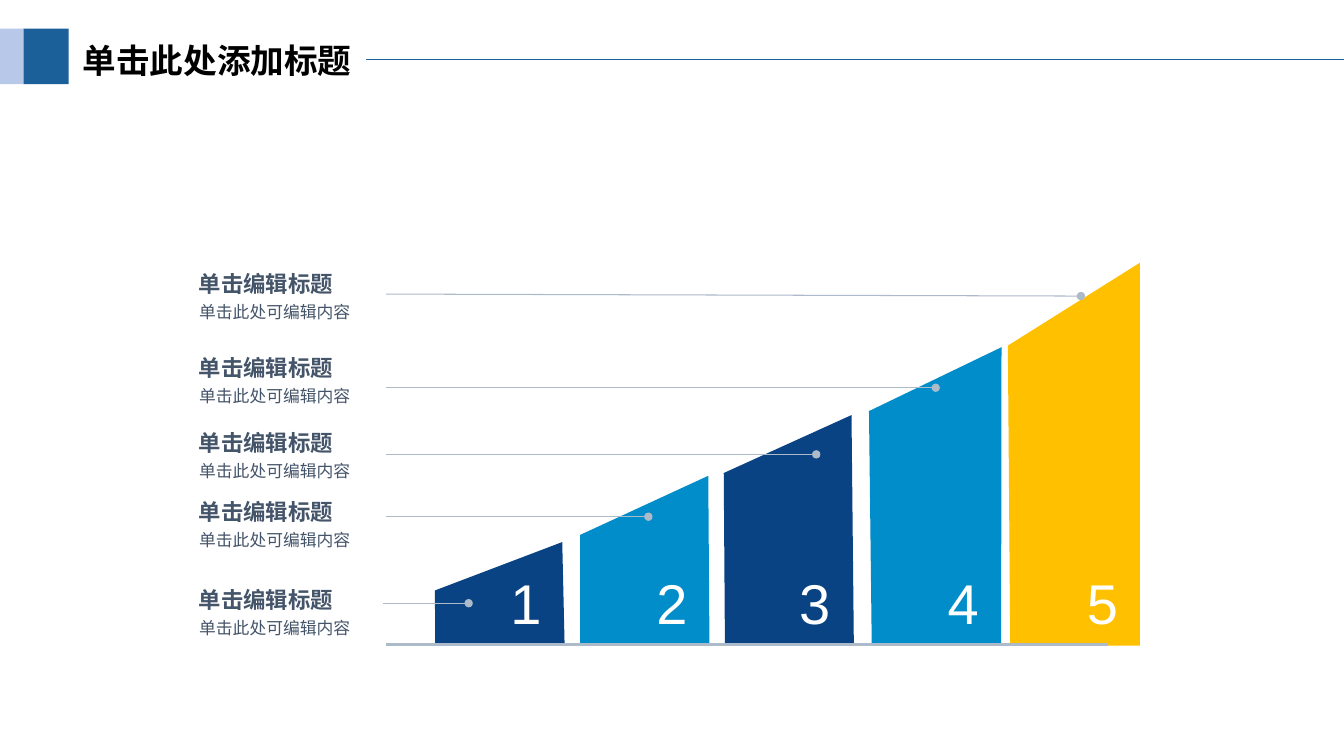
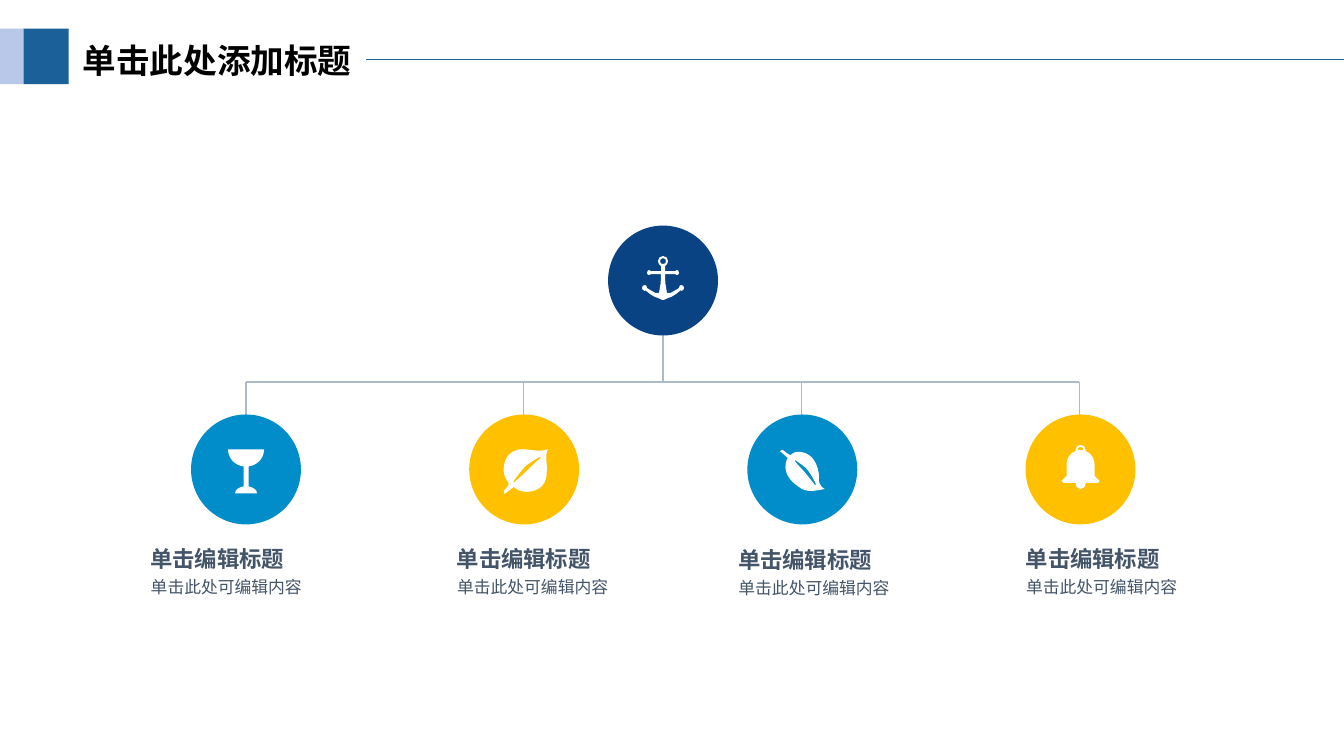
from lxml import etree
from pptx import Presentation
from pptx.dml.color import RGBColor
from pptx.enum.shapes import MSO_CONNECTOR, MSO_SHAPE
from pptx.enum.text import MSO_ANCHOR, MSO_AUTO_SIZE, PP_ALIGN
from pptx.oxml.ns import qn
from pptx.util import Cm, Pt

STRAIGHT = MSO_CONNECTOR.STRAIGHT
RECTANGLE, OVAL = MSO_SHAPE.RECTANGLE, MSO_SHAPE.OVAL
TOP, LEFT, GROW = MSO_ANCHOR.TOP, PP_ALIGN.LEFT, MSO_AUTO_SIZE.SHAPE_TO_FIT_TEXT

# Shared style
HEADER_BLUE = RGBColor(0x1B, 0x60, 0x99)
PALE_BLUE = RGBColor(0xB8, 0xC8, 0xE9)
NAVY = RGBColor(0x0A, 0x43, 0x83)
SKY = RGBColor(0x01, 0x8D, 0xC9)
GOLD = RGBColor(0xFF, 0xC0, 0x00)
RULE_GREY = RGBColor(0xAD, 0xBA, 0xCA)
SLATE = RGBColor(0x44, 0x54, 0x69)
BLACK = RGBColor(0x00, 0x00, 0x00)
WHITE = RGBColor(0xFF, 0xFF, 0xFF)
LATIN_FONT, CJK_FONT = "Arial", "Noto Sans CJK SC"

SLIDE_WIDTH, SLIDE_HEIGHT = 33.87, 19.05
TITLE = "单击此处添加标题"
HEADING, DETAIL = "单击编辑标题", "单击此处可编辑内容"

# Slide 1: (top left, top right, bottom right x, bottom left x, fill, digit x)
BAR_BOTTOM, BASELINE = 16.27, 16.25
BARS = [
    ((10.96, 14.88), (14.17, 13.66), 14.23, 10.97, NAVY, 12.61),
    ((14.62, 13.48), (17.85, 11.99), 17.88, 14.62, SKY, 16.29),
    ((18.24, 11.92), (21.46, 10.46), 21.52, 18.27, NAVY, 19.89),
    ((21.9, 10.36), (25.24, 8.75), 25.23, 21.97, SKY, 23.63),
    ((25.4, 8.71), (28.73, 6.62), 28.73, 25.46, GOLD, 27.14),
]
# (dot, outer end, label top)
CALLOUTS = [
    ((27.24, 7.46), (9.73, 7.41), 6.81),
    ((23.58, 9.77), (9.73, 9.77), 8.92),
    ((20.57, 11.45), (9.73, 11.45), 10.82),
    ((16.34, 13.02), (9.73, 13.02), 12.55),
    ((11.81, 15.2), (9.65, 15.2), 14.78),
]

# Slide 2: icon outlines on a grid of 110 units per circle diameter.
# Two numbers make a straight segment, six a cubic curve.
CIRCLE = 2.77
GRID = 110
ANCHOR = [
    [(0, 0), (3, 0, 5, 2, 5, 5), (5, 7, 4, 9, 2, 10), (2, 15), (12, 15),
     (13, 14, 13, 14, 14, 14), (15, 14, 16, 15, 16, 17),
     (16, 18, 15, 19, 14, 19), (13, 19, 13, 18, 12, 18), (2, 18),
     (2, 23, 2.5, 28, 2.5, 28), (4, 37), (7, 37, 9, 37, 11, 35),
     (13, 34, 14, 33, 16, 32), (16, 30, 17, 29, 18, 29),
     (20, 29, 21, 30, 21, 32), (21, 33, 20, 35, 18, 35), (18, 34),
     (17, 35, 15, 36, 13, 38), (11, 39, 9, 41, 5, 42), (5, 42, 1, 44, 0, 44)],
    [(0, 2), (2, 2, 3, 4, 3, 5), (3, 7, 2, 8, 0, 8)],
]
CUP = [
    [(18, 0), (18, 9, 11, 16, 2.5, 17), (2.5, 37), (7, 38, 11, 40, 11, 44)],
]
BELL = [
    [(0, 0), (3, 0, 5, 2, 5, 5), (5, 6), (10, 8, 14, 13, 14, 19), (14, 31),
     (19, 36), (19, 37, 18, 38, 17, 38), (5, 38), (5, 39),
     (5, 42, 3, 44, 0, 44)],
    [(0, 2), (2, 2, 3, 3, 3, 5), (0, 5)],
]
BROAD_LEAF = [
    [(48, 1), (48, 1, 45, 4, 31, 2), (19, 0, 14, 2, 9, 7),
     (5, 11, 0, 25, 9, 35), (11, 36, 4, 43, 4, 43), (5, 46), (14, 39),
     (14, 39, 19, 44, 26, 44), (35, 44, 47, 40, 47, 25),
     (48, 16, 45, 9, 48, 1)],
    [(41, 10), (41, 10, 36, 14, 29, 21), (23, 27, 15, 34, 15, 34), (14, 34),
     (14, 33), (14, 33, 21, 23, 26, 18), (32, 13, 40, 9, 40, 9), (41, 9)],
]
NARROW_LEAF = [
    [(41, 30), (42, 24, 39, 15, 36, 11), (31, 3, 18, 0, 13, 6),
     (12, 7, 5, 1, 5, 1), (2, 2), (10, 9), (10, 9, 0, 24, 21, 38),
     (28, 44, 37, 42, 47, 40), (47, 40, 41, 38, 41, 30)],
    [(38, 36), (37, 36), (37, 36, 31, 28, 25, 21), (18, 14, 17, 12, 17, 12),
     (17, 11), (17, 11, 22, 14, 28, 19), (33, 24, 38, 35, 38, 35)],
]
# (outlines, mirrored about the axis, offset from circle centre in grid units)
ANCHOR_ICON = (ANCHOR, True, (0, -24.5))
# (fill, icon, label left, label top)
BRANCHES = [
    (SKY, (CUP, True, (0, -20)), 3.79, 13.74),
    (GOLD, (BROAD_LEAF, False, (-24.5, -21.5)), 11.51, 13.74),
    (SKY, (NARROW_LEAF, False, (-24.5, -20.5)), 18.6, 13.77),
    (GOLD, (BELL, True, (0, -24.5)), 25.85, 13.74),
]


# Basic elements
def paint(shape, color):
    shape.shadow.inherit = False
    shape.fill.solid()
    shape.fill.fore_color.rgb = color
    shape.line.fill.background()


def add_block(slide, kind, left, top, width, height, color):
    block = slide.shapes.add_shape(kind, Cm(left), Cm(top), Cm(width), Cm(height))
    paint(block, color)


def add_outline(slide, contours, color):
    """Draw closed contours in cm as one shape; later ones cut holes.

    A contour lists segments of one point (straight) or three (cubic curve).
    """
    builder = None
    for contour in contours:
        start, *rest = [(Cm(x), Cm(y)) for segment in contour for x, y in segment]
        if builder is None:
            builder = slide.shapes.build_freeform(*start, scale=1.0)
        else:
            builder.move_to(*start)
        builder.add_line_segments(rest, close=True)
    outline = builder.convert_to_shape()
    paint(outline, color)

    # Join the three points of each curve into one cubic segment
    route = next(outline._element.iter(qn("a:path")))
    points = iter(route.findall(qn("a:lnTo")))
    for contour in contours:
        for segment in contour[1:]:
            group = [next(points) for _ in segment]
            if len(group) == 3:
                curve = etree.Element(qn("a:cubicBezTo"))
                group[0].addprevious(curve)
                for point in group:
                    curve.append(point[0])
                    route.remove(point)


def add_rule(slide, start, end, color, weight, dot=False):
    rule = slide.shapes.add_connector(
        STRAIGHT, *(Cm(value) for value in (*start, *end)))
    rule.line.color.rgb = color
    rule.line.width = Pt(weight)
    properties = rule._element.spPr
    if dot:
        etree.SubElement(properties.find(qn("a:ln")), qn("a:headEnd"), type="oval")
    etree.SubElement(properties, qn("a:effectLst"))


def write(frame, text, size, color, bold=False, latin=LATIN_FONT):
    paragraph = frame.paragraphs[0]
    paragraph.alignment = LEFT
    run = paragraph.add_run()
    run.text = text
    run.font.size = Pt(size)
    run.font.bold = bold
    run.font.color.rgb = color
    run.font.name = latin
    etree.SubElement(run.font._element, qn("a:ea"), typeface=CJK_FONT)


def add_text(slide, left, top, width, height, text, size, color,
             bold=False, inset=True):
    box = slide.shapes.add_textbox(Cm(left), Cm(top), Cm(width), Cm(height))
    frame = box.text_frame
    frame.word_wrap = True
    frame.auto_size = GROW
    if not inset:
        frame.margin_left = frame.margin_right = 0
        frame.margin_top = frame.margin_bottom = 0
    write(frame, text, size, color, bold)


def add_label(slide, left, top):
    add_text(slide, left, top, 5.44, 0.69, HEADING, 16, SLATE, True, False)
    add_text(slide, left + 0.01, top + 0.79, 6.48, 0.51, DETAIL, 12, SLATE,
             inset=False)


def add_titled_slide(prs):
    slide = prs.slides.add_slide(prs.slide_layouts[5])
    add_block(slide, RECTANGLE, 0.59, 0.72, 1.14, 1.4, HEADER_BLUE)
    add_block(slide, RECTANGLE, 0, 0.72, 0.59, 1.4, PALE_BLUE)
    title = slide.shapes.title
    title.left, title.top = Cm(1.83), Cm(0.88)
    title.width, title.height = Cm(7.39), Cm(1.27)
    title.text_frame.vertical_anchor = TOP
    title.text_frame.word_wrap = True
    write(title.text_frame, TITLE, 24, BLACK, True, CJK_FONT)
    add_rule(slide, (9.23, 1.5), (SLIDE_WIDTH, 1.5), HEADER_BLUE, 0.75)
    return slide


# Icons
def split_points(segment):
    return list(zip(segment[::2], segment[1::2]))


def mirror(contour):
    """The way back from the last point, reflected about the axis."""
    back = [[contour[-1][-1]]]
    for before, segment in reversed(list(zip(contour, contour[1:]))):
        back.append([*reversed(segment[:-1]), before[-1]])
    return [[(-x, y) for x, y in segment] for segment in back]


def add_badge(slide, center_x, center_y, color, icon):
    """A circle with a white icon in it."""
    add_block(slide, OVAL, center_x - CIRCLE / 2, center_y - CIRCLE / 2,
              CIRCLE, CIRCLE, color)
    outlines, mirrored, (dx, dy) = icon
    unit = CIRCLE / GRID
    contours = []
    for outline in outlines:
        contour = [split_points(segment) for segment in outline]
        if mirrored:
            contour += mirror(contour)
        contours.append([
            [(center_x + (x + dx) * unit, center_y + (y + dy) * unit)
             for x, y in segment] for segment in contour])
    add_outline(slide, contours, WHITE)


# Slides
def build_growth_slide(prs):
    slide = add_titled_slide(prs)
    for top_left, top_right, right, left, color, _ in BARS:
        corners = [top_left, top_right, (right, BAR_BOTTOM), (left, BAR_BOTTOM)]
        add_outline(slide, [[[corner] for corner in corners]], color)
    add_rule(slide, (9.73, BASELINE), (27.91, BASELINE), RULE_GREY, 2.25)
    for number, bar in enumerate(BARS, start=1):
        add_text(slide, bar[-1], 14.2, 1.24, 1.96, str(number), 40, WHITE)
    for dot, end, label_top in CALLOUTS:
        add_rule(slide, dot, end, RULE_GREY, 0.75, dot=True)
        add_label(slide, 5.01, label_top)


def build_tree_slide(prs):
    slide = add_titled_slide(prs)
    root_x, root_y, branch_y, bus_y = 16.71, 7.07, 11.83, 9.63
    drops = [6.2 + 7 * i for i in range(len(BRANCHES))]
    for x in drops:
        add_rule(slide, (x, 10.95), (x, bus_y), RULE_GREY, 1)
    add_rule(slide, (drops[0], bus_y), (drops[-1], bus_y), RULE_GREY, 1)
    add_rule(slide, (root_x, bus_y), (root_x, 8.33), RULE_GREY, 1)
    add_badge(slide, root_x, root_y, NAVY, ANCHOR_ICON)
    for i, (color, icon, label_left, label_top) in enumerate(BRANCHES):
        add_badge(slide, 6.2 + 7.01 * i, branch_y, color, icon)
        add_label(slide, label_left, label_top)


def main():
    prs = Presentation()
    prs.slide_width, prs.slide_height = Cm(SLIDE_WIDTH), Cm(SLIDE_HEIGHT)
    build_growth_slide(prs)
    build_tree_slide(prs)
    prs.save("out.pptx")


if __name__ == "__main__":
    main()
